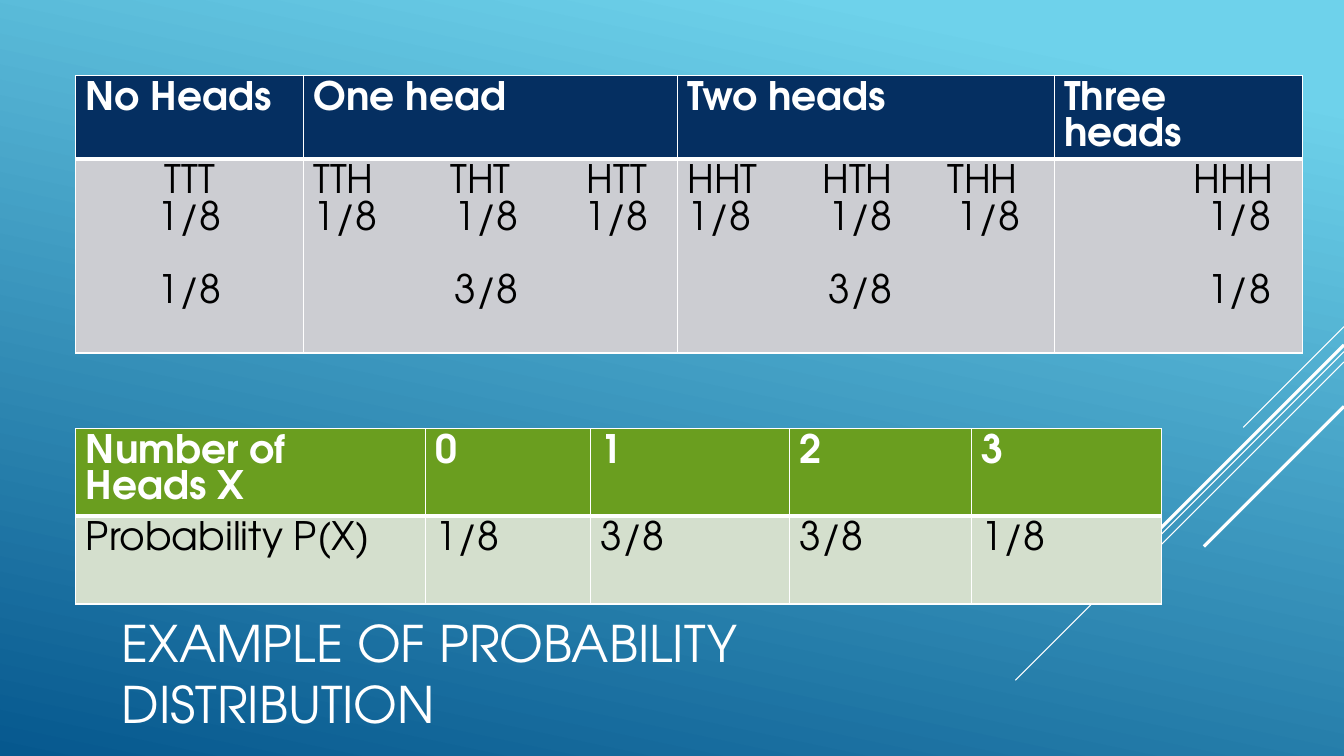
from pptx import Presentation
from pptx.dml.color import RGBColor
from pptx.enum.shapes import MSO_CONNECTOR
from pptx.enum.text import MSO_ANCHOR, PP_ALIGN
from pptx.oxml.ns import qn
from pptx.util import Cm, Pt
from lxml import etree

STRAIGHT = MSO_CONNECTOR.STRAIGHT
MIDDLE = MSO_ANCHOR.MIDDLE
LEFT, CENTER = PP_ALIGN.LEFT, PP_ALIGN.CENTER
FONT = "TeX Gyre Adventor"
WHITE, BLACK = "FFFFFF", "000000"
SLIDE_WIDTH, SLIDE_HEIGHT = 33.87, 19.05
ROW_PITCH = 26.2

STREAKS = [
    (8.23, 2.54, 0.75),
    (8.86, 8.28, 0.75),
    (9.12, 5.26, 0.75),
    (8.69, 4.85, 2.25),
    (10.24, 3.53, 2.25),
]

OUTCOME_HEADS = ["No Heads", "One head", "Two heads", "Three heads"]
OUTCOMES = [
    [("TTT", []), ("1/8", []), ("1/8", [])],
    [("TTH\tTHT\tHTT", [3.45, 6.88]), ("1/8\t1/8\t1/8", [3.56, 6.83]), ("\t3/8", [3.56])],
    [("HHT\tHTH\tTHH", [3.4, 6.55]), ("1/8\t1/8\t1/8", [3.56, 6.78]), ("\t3/8", [3.56])],
    [("\tHHH", [3.25]), ("\t1/8", [3.6]), ("\t1/8", [3.6])],
]
DISTRIBUTION_HEADS = ["Number of Heads X", "0", "1", "2", "3"]
PROBABILITIES = ["Probability P(X)", "1/8", "3/8", "3/8", "1/8"]


def rgb(value):
    """Turn a hex string into a colour."""
    return RGBColor.from_string(value)


def paint_background(slide):
    """Fill the slide with the blue gradient."""
    fill = slide.background.fill
    fill.gradient()
    fill.gradient_angle = 258
    for stop, position, colour in zip(fill.gradient_stops, (0.1, 1), ("6ED2EB", "06588E")):
        stop.position = position
        stop.color.rgb = rgb(colour)


def add_streak(slide, top, reach, weight):
    """Draw a diagonal line down from the right edge."""
    streak = slide.shapes.add_connector(
        STRAIGHT, Cm(SLIDE_WIDTH), Cm(top), Cm(SLIDE_WIDTH - reach), Cm(top + reach))
    streak.line.color.rgb = rgb(WHITE)
    streak.line.width = Pt(weight)
    etree.SubElement(streak._element.spPr, qn("a:effectLst"))


def write_line(paragraph, text, size, pitch, colour, bold=False):
    """Add one run with its font and line pitch."""
    paragraph.line_spacing = Pt(pitch)
    run = paragraph.add_run()
    run.text = text
    run.font.name = FONT
    run.font.size = Pt(size)
    run.font.bold = bold
    run.font.color.rgb = rgb(colour)


def set_tabs(paragraph, stops):
    """Give a paragraph left tab stops."""
    tab_list = etree.SubElement(paragraph._p.get_or_add_pPr(), qn("a:tabLst"))
    for stop in stops:
        etree.SubElement(tab_list, qn("a:tab"), pos=str(Cm(stop)), algn="l")


def set_borders(cell, top, bottom):
    """Give a cell white borders of the given weights."""
    properties = cell._tc.get_or_add_tcPr()
    for side, weight in (("L", 1), ("R", 1), ("T", top), ("B", bottom)):
        border = etree.SubElement(properties, qn(f"a:ln{side}"), w=str(Pt(weight)))
        fill = etree.SubElement(border, qn("a:solidFill"))
        etree.SubElement(fill, qn("a:srgbClr"), val=WHITE)


def fill_cell(cell, lines, is_header, colour, align=LEFT):
    """Write the lines of a cell, the third one after a gap."""
    set_borders(cell, 1 if is_header else 3, 3 if is_header else 1)
    cell.fill.solid()
    cell.fill.fore_color.rgb = rgb(colour)
    frame = cell.text_frame
    for index, (text, stops) in enumerate(lines):
        paragraph = frame.add_paragraph() if index else frame.paragraphs[0]
        paragraph.alignment = align
        write_line(paragraph, text, 28, ROW_PITCH, WHITE if is_header else BLACK, is_header)
        if index == 2:
            paragraph.space_before = Pt(ROW_PITCH)
        if stops:
            set_tabs(paragraph, stops)


def add_grid(slide, top, widths, heights, heads, body, colours, first_align=LEFT):
    """Add a table with one header row and one body row."""
    grid = slide.shapes.add_table(
        2, len(widths), Cm(1.91), Cm(top), Cm(sum(widths)), Cm(sum(heights))).table
    for row, height in zip(grid.rows, heights):
        row.height = Cm(height)
    for index, width in enumerate(widths):
        grid.columns[index].width = Cm(width)
        fill_cell(grid.cell(0, index), [(heads[index], [])], True, colours[0])
        align = LEFT if index else first_align
        fill_cell(grid.cell(1, index), body[index], False, colours[1], align)


def add_title(slide, text):
    """Add the slide title."""
    frame = slide.shapes.add_textbox(Cm(2.82), Cm(14.86), Cm(23.7), Cm(4.19)).text_frame
    frame.word_wrap = True
    frame.vertical_anchor = MIDDLE
    write_line(frame.paragraphs[0], text, 36, 43.6, WHITE)


def main():
    """Build and save the slide."""
    deck = Presentation()
    deck.slide_width, deck.slide_height = Cm(SLIDE_WIDTH), Cm(SLIDE_HEIGHT)
    slide = deck.slides.add_slide(deck.slide_layouts[6])
    paint_background(slide)
    for streak in STREAKS:
        add_streak(slide, *streak)
    add_title(slide, "EXAMPLE OF PROBABILITY DISTRIBUTION")
    add_grid(slide, 1.91, [5.74, 9.42, 9.5, 6.25], [2.06, 4.88],
             OUTCOME_HEADS, OUTCOMES, ("052F61", "CCCDD2"), CENTER)
    add_grid(slide, 10.8, [8.81, 4.17, 5, 4.6, 4.78], [2.21, 2.21],
             DISTRIBUTION_HEADS, [[(text, [])] for text in PROBABILITIES],
             ("6A9E1F", "D4DFCD"))
    deck.save("out.pptx")


if __name__ == "__main__":
    main()
